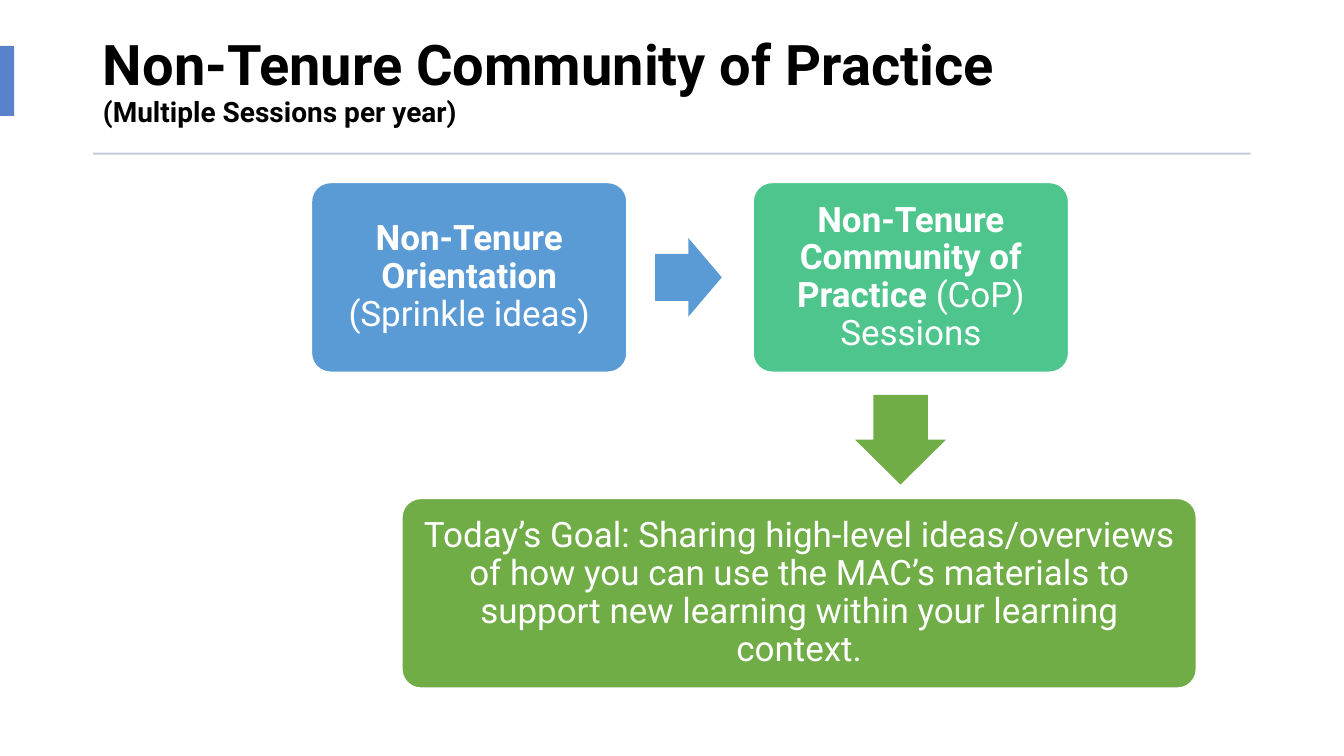
from pptx import Presentation
from pptx.dml.color import RGBColor
from pptx.enum.shapes import MSO_SHAPE
from pptx.enum.text import MSO_ANCHOR, MSO_AUTO_SIZE, PP_ALIGN
from pptx.util import Cm, Pt

RECTANGLE = MSO_SHAPE.RECTANGLE
ROUNDED = MSO_SHAPE.ROUNDED_RECTANGLE
RIGHT_ARROW = MSO_SHAPE.RIGHT_ARROW
DOWN_ARROW = MSO_SHAPE.DOWN_ARROW
MIDDLE = MSO_ANCHOR.MIDDLE
LEFT = PP_ALIGN.LEFT
CENTER = PP_ALIGN.CENTER
NO_AUTOFIT = MSO_AUTO_SIZE.NONE

BLACK = RGBColor(0x00, 0x00, 0x00)
WHITE = RGBColor(0xFF, 0xFF, 0xFF)
ACCENT = RGBColor(0x5A, 0x82, 0xCB)
RULE_GREY = RGBColor(0xC3, 0xCC, 0xD9)
BLUE = RGBColor(0x5B, 0x9B, 0xD5)
TEAL = RGBColor(0x4D, 0xC5, 0x8D)
GREEN = RGBColor(0x70, 0xAD, 0x47)

FONT = "Roboto"
MARGIN = 2.34
CONTENT_WIDTH = 29.18
STEP_WIDTH = 7.95
STEP_HEIGHT = 4.78
STEP_TOP = 4.6


def add_filled(kind, left, top, width, height, color):
    shape = page.shapes.add_shape(kind, Cm(left), Cm(top), Cm(width), Cm(height))
    shape.shadow.inherit = False
    shape.fill.solid()
    shape.fill.fore_color.rgb = color
    shape.line.fill.background()
    return shape


deck = Presentation()
deck.slide_width = Cm(33.87)
deck.slide_height = Cm(19.05)
page = deck.slides.add_slide(deck.slide_layouts[5])

# Title with its smaller second line
title = page.shapes.title
title.left, title.top = Cm(MARGIN), Cm(0.69)
title.width, title.height = Cm(CONTENT_WIDTH), Cm(2.79)
frame = title.text_frame
frame.auto_size = NO_AUTOFIT
frame.word_wrap = True
frame.vertical_anchor = MIDDLE
para = frame.paragraphs[0]
para.alignment = LEFT
para.line_spacing = 0.9
para.font.name = FONT
para.font.bold = True
para.font.color.rgb = BLACK
heading = para.add_run()
heading.text = "Non-Tenure Community of Practice"
heading.font.size = Pt(40)
para.add_line_break()
subheading = para.add_run()
subheading.text = "(Multiple Sessions per year)"
subheading.font.size = Pt(20)

# Accent tab and rule under the title
add_filled(RECTANGLE, 0, 1.16, 0.36, 1.76, ACCENT)
add_filled(RECTANGLE, MARGIN, 3.85, CONTENT_WIDTH, 0.05, RULE_GREY)

# Steps: left, top, width, colour, bold text, regular text
steps = [
    (7.85, STEP_TOP, STEP_WIDTH, BLUE,
     "Non-Tenure Orientation ", "(Sprinkle ideas)"),
    (18.98, STEP_TOP, STEP_WIDTH, TEAL,
     "Non-Tenure Community of Practice ", "(CoP) Sessions"),
    (10.13, 12.56, 20.02, GREEN, "",
     "Today’s Goal: Sharing high-level ideas/overviews of how you can use "
     "the MAC’s materials to support new learning within your learning context."),
]
for left, top, width, color, strong_text, plain_text in steps:
    box = add_filled(ROUNDED, left, top, width, STEP_HEIGHT, color)
    box.adjustments[0] = 0.1
    box.line.color.rgb = WHITE
    box.line.width = Pt(1)
    frame = box.text_frame
    frame.word_wrap = True
    frame.vertical_anchor = MIDDLE
    frame.margin_left = frame.margin_right = Cm(0.25)
    frame.margin_top = frame.margin_bottom = Cm(0.25)
    para = frame.paragraphs[0]
    para.alignment = CENTER
    para.line_spacing = 0.9
    para.font.name = FONT
    para.font.size = Pt(25)
    para.font.color.rgb = WHITE
    for text, bold in ((strong_text, True), (plain_text, False)):
        if text:
            span = para.add_run()
            span.text = text
            span.font.bold = bold

# Arrows between the steps
for kind, left, top, width, height, color in [
    (RIGHT_ARROW, 16.51, 6, 1.68, 1.98, BLUE),
    (DOWN_ARROW, 21.55, 9.95, 2.29, 2.26, GREEN),
]:
    arrow = add_filled(kind, left, top, width, height, color)
    arrow.adjustments[0] = 0.6
    arrow.adjustments[1] = 0.5

deck.save("out.pptx")
